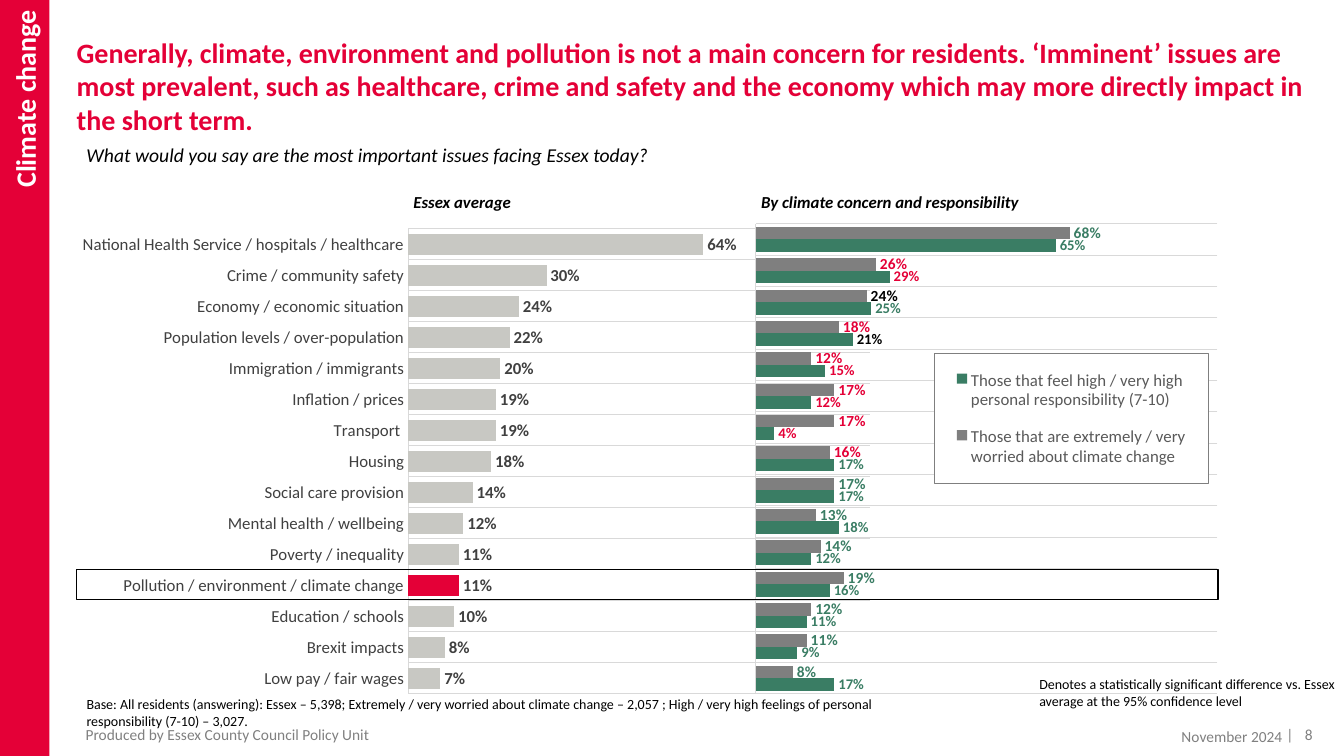
from lxml import etree
from pptx import Presentation
from pptx import util as u
from pptx.chart.data import CategoryChartData
from pptx.dml.color import RGBColor
from pptx.enum import chart as ce
from pptx.enum import shapes, text
from pptx.oxml import parse_xml
from pptx.oxml.ns import nsdecls

PX = 9144
FONT = "Calibri"
HUE = {
    "red": "E40037", "green": "3A7D64", "grey": "7F7F7F", "stone": "C8C8C3",
    "rule": "D9D9D9", "ink": "404040", "key": "595959", "foot": "808080",
    "black": "000000", "white": "FFFFFF",
}
HUE = {name: RGBColor.from_string(code) for name, code in HUE.items()}
ALIGN = text.PP_ALIGN
ANCHOR = text.MSO_ANCHOR


def style(font, size, hue, bold=False, slant=False):
    font.name, font.size = FONT, u.Pt(size)
    font.bold, font.italic = bold, slant
    font.color.rgb = HUE[hue]


def write(shape, words, size, hue, bold=False, slant=False, pad=(10, 5, 10, 5),
          align=ALIGN.LEFT, anchor=ANCHOR.TOP):
    frame = shape.text_frame
    frame.text = words
    frame.word_wrap = True
    frame.auto_size = text.MSO_AUTO_SIZE.NONE
    frame.vertical_anchor = anchor
    frame.margin_left, frame.margin_top, frame.margin_right, frame.margin_bottom = [
        n * PX for n in pad]
    line = frame.paragraphs[0]
    line.alignment = align
    style(line.runs[0].font, size, hue, bold, slant)


deck = Presentation()
deck.slide_width, deck.slide_height = 1333 * PX, 750 * PX
slide = deck.slides.add_slide(deck.slide_layouts[5])
items = slide.shapes

title = items.title
title.left, title.top, title.width, title.height = [n * PX for n in (76, 35, 1234, 108)]
write(title, "Generally, climate, environment and pollution is not a main concern for residents. "
      "‘Imminent’ issues are most prevalent, such as healthcare, crime and safety and the "
      "economy which may more directly impact in the short term.",
      20, "red", bold=True, pad=(0, 0, 0, 0))

band = items.add_shape(shapes.MSO_SHAPE.RECTANGLE, 0, 0, 49 * PX, 750 * PX)
band.shadow.inherit = False
band.fill.solid()
band.fill.fore_color.rgb = HUE["red"]
band.line.fill.background()
write(band, "Climate change", 20, "white", bold=True, pad=(10, 10, 10, 5),
      align=ALIGN.RIGHT, anchor=ANCHOR.MIDDLE)
band.text_frame._txBody.bodyPr.set("vert", "vert270")

issues = [
    "National Health Service / hospitals / healthcare", "Crime / community safety",
    "Economy / economic situation", "Population levels / over-population",
    "Immigration / immigrants", "Inflation / prices", "Transport ", "Housing",
    "Social care provision", "Mental health / wellbeing", "Poverty / inequality",
    "Pollution / environment / climate change", "Education / schools",
    "Brexit impacts", "Low pay / fair wages",
]
ranks = [str(n) for n in range(1, 16)]
focus = issues.index("Pollution / environment / climate change")

average = [("Series 1", [64, 30, 24, 22, 20, 19, 19, 18, 14, 12, 11, 11, 10, 8, 7],
            "stone", 12, "ink", {})]
groups = [
    ("Those that are extremely / very worried about climate change",
     [68, 26, 24, 18, 12, 17, 17, 16, 17, 13, 14, 19, 12, 11, 8],
     "grey", 11, "green",
     {1: "red", 2: "black", 3: "red", 4: "red", 5: "red", 6: "red", 7: "red"}),
    ("Those that feel high / very high personal responsibility (7-10)",
     [65, 29, 25, 21, 15, 12, 4, 17, 17, 18, 12, 16, 11, 9, 17],
     "green", 10.5, "green",
     {1: "red", 3: "black", 4: "red", 5: "red", 6: "red"}),
]

WIDE, HIGH = 863, 488
LAYOUT = ('<c:layout %s><c:manualLayout>%s<c:xMode val="edge"/><c:yMode val="edge"/>'
          '<c:x val="%.4f"/><c:y val="%.4f"/><c:w val="%.4f"/><c:h val="%.4f"/>'
          '</c:manualLayout></c:layout>')


def place(node, box, inner=""):
    for old in node.findall("{*}layout"):
        node.remove(old)
    x, y, w, h = box
    part = parse_xml(LAYOUT % (nsdecls("c"), inner, x / WIDE, y / HIGH, w / WIDE, h / HIGH))
    if inner:
        node.insert(0, part)
    else:
        node.find("{*}legendPos").addnext(part)


for left, names, rows, top in [(0, issues, average, 26), (345, ranks, groups, 21)]:
    data = CategoryChartData(number_format="0%")
    data.categories = names
    for name, shares, *_ in rows:
        data.add_series(name, [n / 100 for n in shares])
    chart = items.add_chart(ce.XL_CHART_TYPE.BAR_CLUSTERED, left * PX, 201 * PX,
                            WIDE * PX, HIGH * PX, data).chart
    chart.has_title = False
    chart.has_legend = len(rows) > 1
    style(chart.font, 10, "black")
    cat, val = chart.category_axis, chart.value_axis
    cat.reverse_order = True
    cat.major_tick_mark = ce.XL_TICK_MARK.NONE
    cat.has_major_gridlines = True
    for line in (cat.format.line, cat.major_gridlines.format.line):
        line.color.rgb = HUE["rule"]
        line.width = u.Pt(0.75)
    style(cat.tick_labels.font, 12, "ink")
    if names is ranks:
        cat.tick_label_position = ce.XL_TICK_LABEL_POSITION.NONE
    val.minimum_scale, val.maximum_scale = 0, 1
    val.has_major_gridlines = False
    val.visible = False
    plot = chart.plots[0]
    plot.gap_width, plot.overlap, plot.vary_by_categories = 50, 0, False
    for bars, (_, _, hue, size, ink, marks) in zip(plot.series, rows):
        bars.format.fill.solid()
        bars.format.fill.fore_color.rgb = HUE[hue]
        tags = bars.data_labels
        tags.show_value = True
        tags.number_format, tags.number_format_is_linked = "0%", False
        tags.position = ce.XL_LABEL_POSITION.OUTSIDE_END
        style(tags.font, size, ink, bold=True)
        for n, tint in marks.items():
            tag = bars.points[n].data_label
            style(tag.font, size, tint, bold=True)
            tag.position = ce.XL_LABEL_POSITION.OUTSIDE_END
    if names is issues:
        fill = plot.series[0].points[focus].format.fill
        fill.solid()
        fill.fore_color.rgb = HUE["red"]
    place(chart._chartSpace.chart.plotArea, (405, top, 458, HIGH - top),
          '<c:layoutTarget val="inner"/>')

legend = chart.legend
legend.position = ce.XL_LEGEND_POSITION.RIGHT
legend.include_in_layout = False
style(legend.font, 12, "key")
place(legend._element, (582, 150, 272, 129))
frame = parse_xml('<c:spPr %s><a:solidFill><a:srgbClr val="%s"/></a:solidFill>'
                  '<a:ln w="9525"><a:solidFill><a:srgbClr val="%s"/></a:solidFill></a:ln>'
                  '</c:spPr>' % (nsdecls("c", "a"), HUE["white"], HUE["grey"]))
legend._element.find("{*}overlay").addnext(frame)

ring = items.add_shape(shapes.MSO_SHAPE.RECTANGLE, 76 * PX, 565 * PX, 1132 * PX, 30 * PX)
ring.shadow.inherit = False
ring.fill.background()
ring.line.color.rgb = HUE["black"]
ring.line.width = u.Pt(1)

head = dict(size=12, hue="black", bold=True, slant=True, pad=(0, 0, 0, 0))
note = dict(size=10, hue="black")
foot = dict(size=11, hue="foot", anchor=ANCHOR.MIDDLE, pad=(9, 5, 0, 5))
end = dict(foot, align=ALIGN.RIGHT)
for box, words, look in [
    ((76, 137, 863, 34), "What would you say are the most important issues facing Essex today?",
     dict(size=14, hue="black", slant=True)),
    ((410, 190, 354, 30), "Essex average", head),
    ((755, 190, 354, 30), "By climate concern and responsibility", head),
    ((76, 685, 835, 44), "Base: All residents (answering): Essex – 5,398; Extremely / very worried "
     "about climate change – 2,057 ; High / very high feelings of personal responsibility "
     "(7-10) – 3,027.", note),
    ((1021, 665, 327, 44), "Denotes a statistically significant difference vs. Essex average "
     "at the 95% confidence level", note),
    ((76, 721, 654, 15), "Produced by Essex County Council Policy Unit", foot),
    ((1032, 723, 240, 15), "November 2024", end),
    ((1253, 721, 30, 15), "|", end),
    ((1272, 721, 30, 15), "8", end),
]:
    write(items.add_textbox(*[n * PX for n in box]), words, **look)

deck.save("out.pptx")
